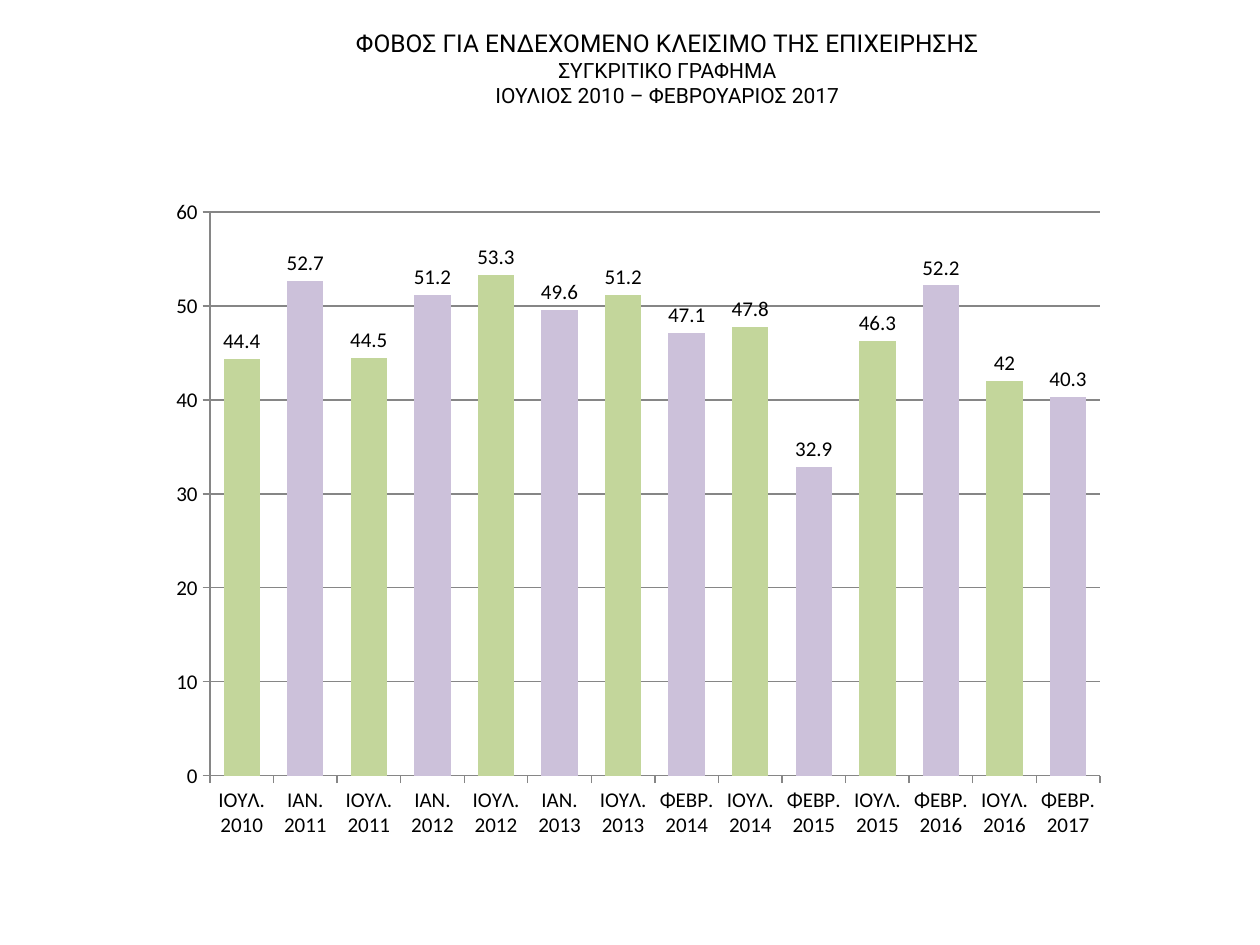
from lxml import etree
from pptx import Presentation
from pptx.chart.data import CategoryChartData
from pptx.dml.color import RGBColor
from pptx.enum.chart import XL_CHART_TYPE, XL_LABEL_POSITION, XL_TICK_MARK
from pptx.enum.text import MSO_ANCHOR, PP_ALIGN
from pptx.oxml.ns import qn
from pptx.util import Pt

COLUMNS = XL_CHART_TYPE.COLUMN_CLUSTERED
OUTSIDE_END = XL_LABEL_POSITION.OUTSIDE_END
TICK_OUT = XL_TICK_MARK.OUTSIDE
TICK_NONE = XL_TICK_MARK.NONE
MIDDLE = MSO_ANCHOR.MIDDLE
CENTER = PP_ALIGN.CENTER

PX = 914400 // 126
BLACK, GREY, GREEN, LILAC = "000000", "868686", "C3D69B", "CCC1DA"

# Content
TITLE = [
    ("ΦΟΒΟΣ ΓΙΑ ΕΝΔΕΧΟΜΕΝΟ ΚΛΕΙΣΙΜΟ ΤΗΣ ΕΠΙΧΕΙΡΗΣΗΣ", 14),
    ("ΣΥΓΚΡΙΤΙΚΟ ΓΡΑΦΗΜΑ", 12),
    ("ΙΟΥΛΙΟΣ 2010 – ΦΕΒΡΟΥΑΡΙΟΣ 2017", 12),
]
FEAR = [
    ("ΙΟΥΛ. 2010", 44.4), ("ΙΑΝ. 2011", 52.7), ("ΙΟΥΛ. 2011", 44.5),
    ("ΙΑΝ. 2012", 51.2), ("ΙΟΥΛ. 2012", 53.3), ("ΙΑΝ. 2013", 49.6),
    ("ΙΟΥΛ. 2013", 51.2), ("ΦΕΒΡ. 2014", 47.1), ("ΙΟΥΛ. 2014", 47.8),
    ("ΦΕΒΡ. 2015", 32.9), ("ΙΟΥΛ. 2015", 46.3), ("ΦΕΒΡ. 2016", 52.2),
    ("ΙΟΥΛ. 2016", 42), ("ΦΕΒΡ. 2017", 40.3),
]
TITLE_BOX = (144, 20, 1047, 96)
CHART_BOX = (157, 186, 962, 664)
PLOT_BOX = (210, 212, 890, 564)


def emu(box):
    return [v * PX for v in box]


def rgb(color):
    return RGBColor.from_string(color)


def style_font(font, size, name, color=BLACK):
    font.size, font.name = Pt(size), name
    font.bold = False
    font.color.rgb = rgb(color)


def style_line(line):
    line.color.rgb = rgb(GREY)
    line.width = Pt(0.75)


def place_plot(chart):
    """Fix the inner plot area as fractions of the chart frame."""
    left, top, width, height = CHART_BOX
    x, y, w, h = PLOT_BOX
    area = chart._chartSpace.chart.plotArea
    for old in area.findall(qn("c:layout")):
        area.remove(old)
    layout = etree.Element(qn("c:layout"))
    area.insert(0, layout)
    manual = etree.SubElement(layout, qn("c:manualLayout"))
    settings = [
        ("layoutTarget", "inner"), ("xMode", "edge"), ("yMode", "edge"),
        ("x", (x - left) / width), ("y", (y - top) / height),
        ("w", w / width), ("h", h / height),
    ]
    for tag, value in settings:
        etree.SubElement(manual, qn("c:" + tag)).set("val", str(value))


prs = Presentation()
prs.slide_width, prs.slide_height = 1260 * PX, 945 * PX
s = prs.slides.add_slide(prs.slide_layouts[6])

# Title
tf = s.shapes.add_textbox(*emu(TITLE_BOX)).text_frame
tf.word_wrap = True
tf.vertical_anchor = MIDDLE
p = tf.paragraphs[0]
p.alignment = CENTER
for i, (text, size) in enumerate(TITLE):
    if i:
        p.add_line_break()
    r = p.add_run()
    r.text = text
    style_font(r.font, size, "Roboto")

# Column chart
data = CategoryChartData()
data.categories = [month for month, _ in FEAR]
data.add_series("Series 1", [value for _, value in FEAR])
chart = s.shapes.add_chart(COLUMNS, *emu(CHART_BOX), data).chart
chart.has_legend = False
chart.has_title = False
style_font(chart.font, 18, "Vollkorn")
place_plot(chart)

# Axes
for axis in (chart.category_axis, chart.value_axis):
    axis.major_tick_mark = TICK_OUT
    axis.minor_tick_mark = TICK_NONE
    style_font(axis.tick_labels.font, 12, "Calibri")
    style_line(axis.format.line)
scale = chart.value_axis
scale.minimum_scale, scale.maximum_scale, scale.major_unit = 0, 60, 10
style_line(scale.major_gridlines.format.line)

# Columns in alternating colours, with values above
plot = chart.plots[0]
plot.gap_width = 75
plot.vary_by_categories = False
series = plot.series[0]
series.invert_if_negative = False
series.format.fill.solid()
series.format.fill.fore_color.rgb = rgb(GREEN)
for i in range(1, len(FEAR), 2):
    fill = series.points[i].format.fill
    fill.solid()
    fill.fore_color.rgb = rgb(LILAC)
labels = series.data_labels
labels.show_value = True
labels.position = OUTSIDE_END
style_font(labels.font, 12, "Calibri")

prs.save("out.pptx")
